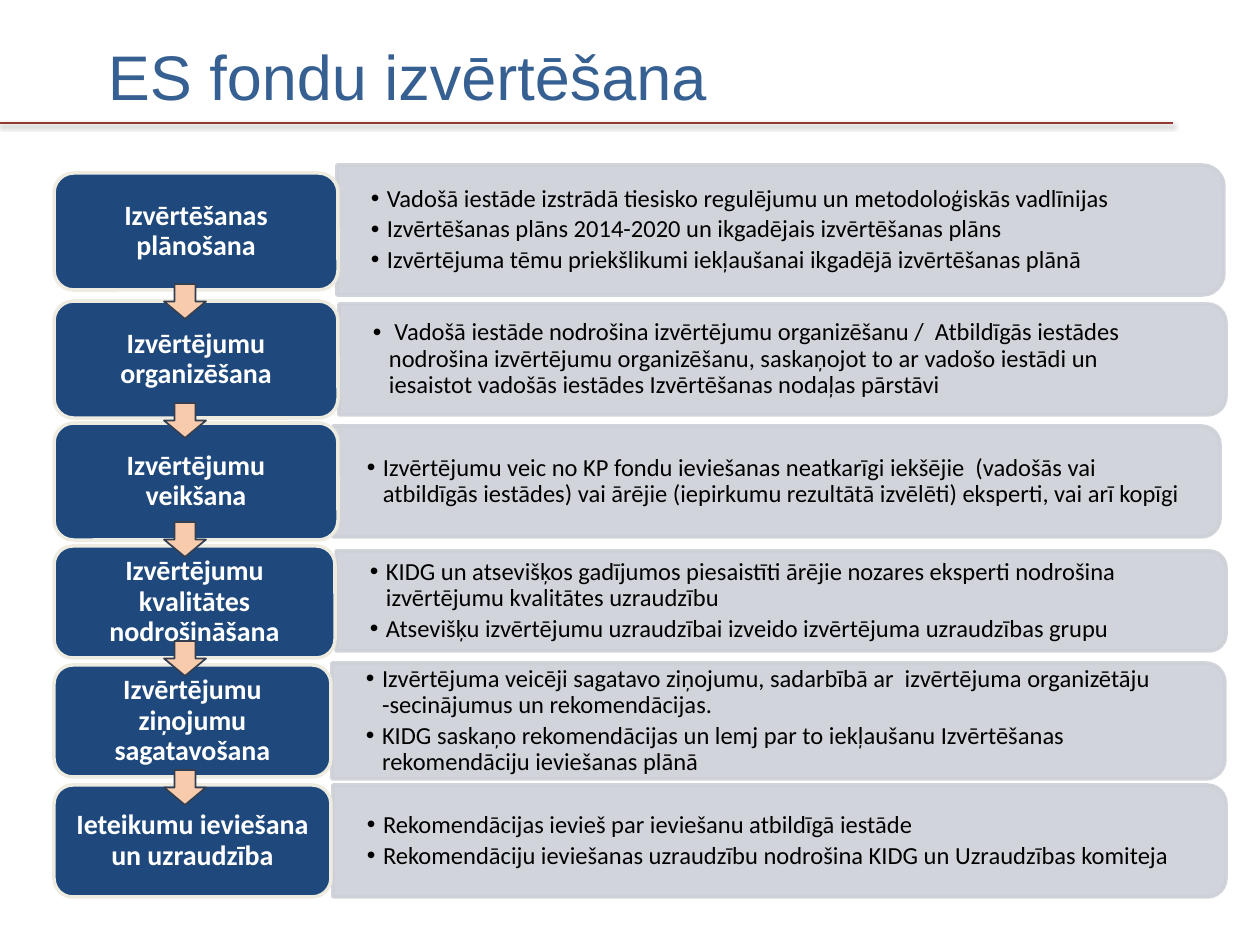
from lxml import etree
from pptx import Presentation
from pptx import util as u
from pptx.dml.color import RGBColor
from pptx.enum import shapes, text
from pptx.oxml.ns import qn

PX = 914400 / 126
NAVY, CREAM, GREY, PEACH, SLATE = "1F497D", "EEECE1", "CDD0D7", "F8CBAD", "333F50"
STEP_LEFT = 54

# Label, step box (top, width, height), panel (left, top, width, height), bullets
STEPS = [
    ("Izvērtēšanas plānošana", (173, 284, 117), (337, 165, 887, 130), [
        "Vadošā iestāde izstrādā tiesisko regulējumu un metodoloģiskās vadlīnijas",
        "Izvērtēšanas plāns 2014-2020 un ikgadējais izvērtēšanas plāns",
        "Izvērtējuma tēmu priekšlikumi iekļaušanai ikgadējā izvērtēšanas plānā"]),
    ("Izvērtējumu organizēšana", (301, 284, 117), (339, 304, 887, 111), [
        " Vadošā iestāde nodrošina izvērtējumu organizēšanu /  Atbildīgās iestādes "
        "nodrošina izvērtējumu organizēšanu, saskaņojot to ar vadošo iestādi un "
        "iesaistot vadošās iestādes Izvērtēšanas nodaļas pārstāvi"]),
    ("Izvērtējumu veikšana", (423, 284, 117), (333, 426, 887, 111), [
        "Izvērtējumu veic no KP fondu ieviešanas neatkarīgi iekšējie  (vadošās vai "
        "atbildīgās iestādes) vai ārējie (iepirkumu rezultātā izvēlēti) eksperti, "
        "vai arī kopīgi"]),
    ("Izvērtējumu kvalitātes nodrošināšana", (546, 281, 112), (336, 551, 890, 100), [
        "KIDG un atsevišķos gadījumos piesaistīti ārējie nozares eksperti nodrošina "
        "izvērtējumu kvalitātes uzraudzību",
        "Atsevišķu izvērtējumu uzraudzībai izveido izvērtējuma uzraudzības grupu"]),
    ("Izvērtējumu ziņojumu sagatavošana", (665, 277, 112), (332, 663, 893, 116), [
        "Izvērtējuma veicēji sagatavo ziņojumu, sadarbībā ar  izvērtējuma organizētāju "
        "-secinājumus un rekomendācijas.",
        "KIDG saskaņo rekomendācijas un lemj par to iekļaušanu Izvērtēšanas "
        "rekomendāciju ieviešanas plānā"]),
    ("Ieteikumu ieviešana un uzraudzība", (785, 277, 112), (333, 785, 893, 112), [
        "Rekomendācijas ievieš par ieviešanu atbildīgā iestāde",
        "Rekomendāciju ieviešanas uzraudzību nodrošina KIDG un Uzraudzības komiteja"]),
]
ARROW_TOPS = [284, 403, 522, 641, 770]


def px(value):
    return u.Emu(round(value * PX))


def color(value):
    return RGBColor.from_string(value)


def style_text(paragraph, size, font, ink, bold=False):
    for run in paragraph.runs:
        run.font.size = u.Pt(size)
        run.font.name = font
        run.font.bold = bold
        run.font.color.rgb = color(ink)


def set_frame(frame, horizontal, vertical):
    frame.word_wrap = True
    frame.vertical_anchor = text.MSO_ANCHOR.MIDDLE
    frame.margin_left = frame.margin_right = px(horizontal)
    frame.margin_top = frame.margin_bottom = px(vertical)


def add_shape(slide, kind, box, fill, line, weight):
    shape = slide.shapes.add_shape(kind, *map(px, box))
    shape.shadow.inherit = False
    shape.fill.solid()
    shape.fill.fore_color.rgb = color(fill)
    shape.line.color.rgb = color(line)
    shape.line.width = u.Pt(weight)
    return shape


def add_title(slide, title):
    box = slide.shapes.add_textbox(*map(px, (95, 16, 1071, 118)))
    set_frame(box.text_frame, 13, 6)
    box.text_frame.text = title
    style_text(box.text_frame.paragraphs[0], 36, "Arial", "376092")


def add_rule(slide):
    rule = slide.shapes.add_connector(
        shapes.MSO_CONNECTOR.STRAIGHT, px(0), px(123), px(1173), px(123))
    rule.line.color.rgb = color("953735")
    rule.line.width = u.Pt(0.75)
    # Soft shadow falling straight down
    effects = etree.SubElement(rule._element.spPr, qn("a:effectLst"))
    shadow = etree.SubElement(effects, qn("a:outerShdw"), blurRad="40000",
                              dist="20000", dir="5400000", rotWithShape="0")
    black = etree.SubElement(shadow, qn("a:srgbClr"), val="000000")
    etree.SubElement(black, qn("a:alpha"), val="38000")


def add_panel(slide, box, bullets):
    left, top, width, height = box
    # The rounded end points right, so the shape is turned about its centre
    turned = (left + (width - height) / 2, top + (height - width) / 2, height, width)
    panel = add_shape(slide, shapes.MSO_SHAPE.ROUND_2_SAME_RECTANGLE, turned, GREY, GREY, 2)
    panel.rotation = 90
    for tint in panel._element.spPr.iter(qn("a:srgbClr")):
        etree.SubElement(tint, qn("a:alpha"), val="90000")

    body = slide.shapes.add_textbox(*map(px, (left, top + 6, width - 6, height - 12)))
    frame = body.text_frame
    set_frame(frame, 34, 18)
    frame.text = "\n".join(bullets)
    for paragraph in frame.paragraphs:
        paragraph.level = 1
        paragraph.line_spacing = 0.9
        paragraph.space_after = u.Pt(2.5)
        style_text(paragraph, 14, "Calibri", "000000")
        properties = paragraph._p.get_or_add_pPr()
        properties.set("marL", str(px(16)))
        properties.set("indent", str(-px(16)))
        etree.SubElement(properties, qn("a:buFont"), typeface="Arial")
        etree.SubElement(properties, qn("a:buChar"), char="•")


def add_step(slide, label, top, width, height):
    step = add_shape(slide, shapes.MSO_SHAPE.ROUNDED_RECTANGLE,
                     (STEP_LEFT, top, width, height), NAVY, CREAM, 2)
    set_frame(step.text_frame, 15, 10)
    step.text_frame.text = label
    paragraph = step.text_frame.paragraphs[0]
    paragraph.alignment = text.PP_ALIGN.CENTER
    paragraph.line_spacing = 0.9
    style_text(paragraph, 16, "Calibri", "FFFFFF", bold=True)


def main():
    presentation = Presentation()
    presentation.slide_width, presentation.slide_height = px(1260), px(945)
    slide = presentation.slides.add_slide(presentation.slide_layouts[6])

    # Heading
    add_title(slide, "ES fondu izvērtēšana")
    add_rule(slide)

    # Process steps with their descriptions
    for label, step, panel, bullets in STEPS:
        add_panel(slide, panel, bullets)
        add_step(slide, label, *step)

    # Arrows between steps
    for top in ARROW_TOPS:
        add_shape(slide, shapes.MSO_SHAPE.DOWN_ARROW, (164, top, 42, 35), PEACH, SLATE, 1)

    presentation.save("out.pptx")


if __name__ == "__main__":
    main()
